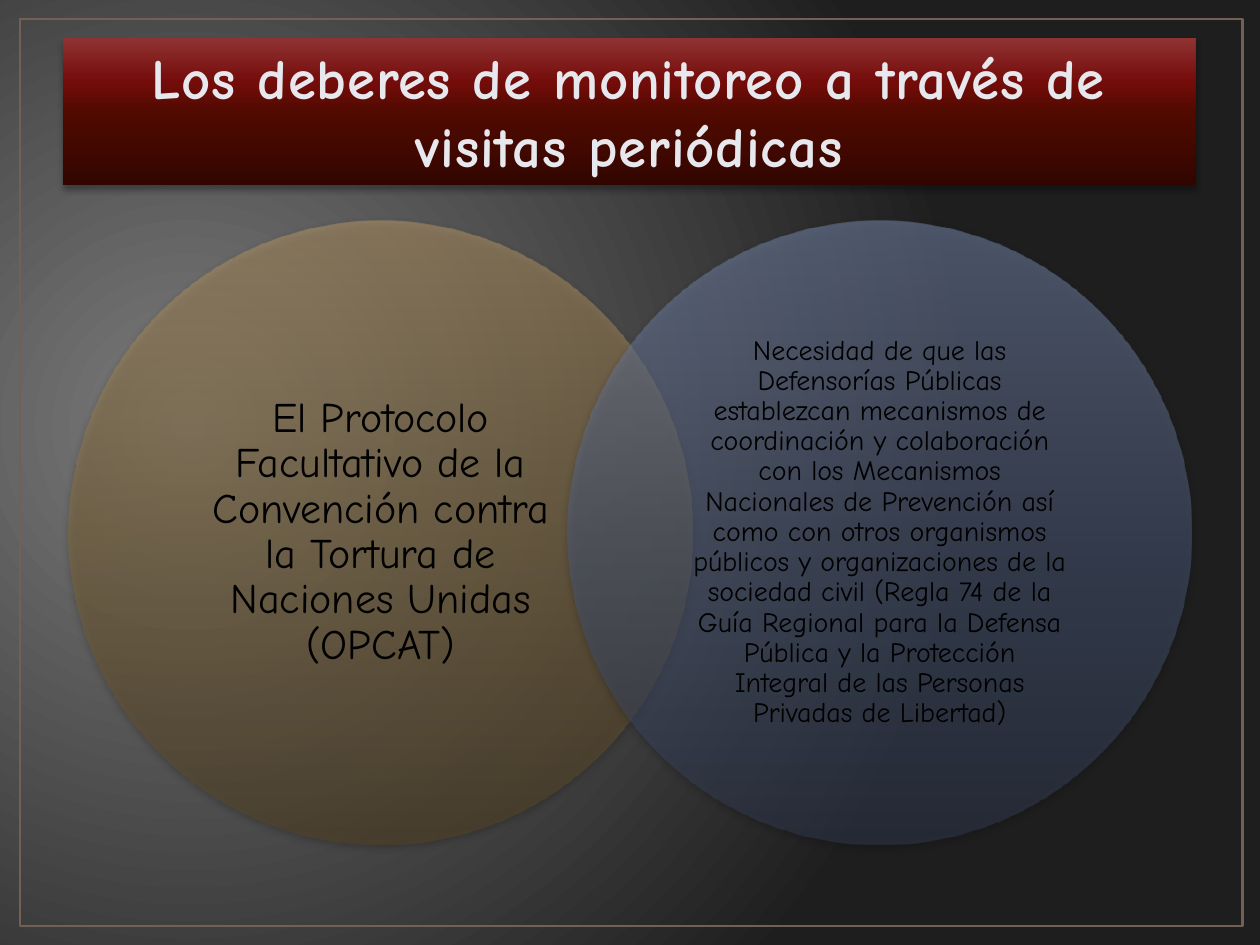
from pptx import Presentation
from pptx.dml.color import RGBColor
from pptx.enum.shapes import MSO_SHAPE
from pptx.enum.text import MSO_ANCHOR, MSO_AUTO_SIZE, PP_ALIGN
from pptx.oxml import parse_xml
from pptx.oxml.ns import nsdecls
from pptx.util import Pt

FONT = "Comic Neue"
BLACK = RGBColor(0x00, 0x00, 0x00)
PALE = RGBColor(0xE6, 0xE8, 0xEE)
EDGE = RGBColor(0x72, 0x60, 0x56)
WINE = RGBColor(0x56, 0x00, 0x00)
GREYS = [(0, RGBColor(0x7A, 0x7A, 0x7A)), (100, RGBColor(0x1E, 0x1E, 0x1E))]
REDS = [(0, RGBColor(0x32, 0x06, 0x00)), (50, RGBColor(0x51, 0x0A, 0x00)),
        (70, RGBColor(0x74, 0x0C, 0x0A)), (100, RGBColor(0x8F, 0x33, 0x32))]
GOLDS = [(0, RGBColor(0x56, 0x44, 0x25)), (50, RGBColor(0x89, 0x6D, 0x3E)),
         (70, RGBColor(0x9D, 0x80, 0x50)), (100, RGBColor(0xC0, 0x9F, 0x6B))]
BLUES = [(0, RGBColor(0x31, 0x3B, 0x51)), (50, RGBColor(0x50, 0x60, 0x82)),
         (70, RGBColor(0x63, 0x73, 0x96)), (100, RGBColor(0x7F, 0x91, 0xB8))]
UPWARD = '<a:lin ang="16200000" scaled="0"/>'
GLOW = ('<a:path path="circle"><a:fillToRect l="15000" t="50000" '
        'r="85000" b="60000"/></a:path>')


def shade(solid, stops, course, alpha=100):
    """Swap a solid fill element for a gradient."""
    marks = "".join(
        f'<a:gs pos="{pos * 1000}"><a:srgbClr val="{color}">'
        f'<a:alpha val="{alpha * 1000}"/></a:srgbClr></a:gs>'
        for pos, color in stops)
    solid.getparent().replace(solid, parse_xml(
        f'<a:gradFill {nsdecls("a")} rotWithShape="1">'
        f'<a:gsLst>{marks}</a:gsLst>{course}</a:gradFill>'))


def dress(shape, stops, alpha, blur, drop, dark):
    """Give a shape a gradient, no outline and a shadow below it."""
    shape.fill.solid()
    shade(shape.element.xpath("./p:spPr/a:solidFill")[0], stops, UPWARD, alpha)
    shape.line.fill.background()
    shape.shadow.inherit = False
    shape.element.xpath("./p:spPr/a:effectLst")[0].append(parse_xml(
        f'<a:outerShdw {nsdecls("a")} blurRad="{Pt(blur)}" dist="{Pt(drop)}" '
        f'dir="5400000" rotWithShape="0"><a:srgbClr val="{BLACK}">'
        f'<a:alpha val="{dark * 1000}"/></a:srgbClr></a:outerShdw>'))


deck = Presentation()
deck.slide_width, deck.slide_height = Pt(720), Pt(540)
slide = deck.slides.add_slide(deck.slide_layouts[5])

# Background
slide.background.fill.solid()
shade(slide.element.xpath(".//p:bgPr/a:solidFill")[0], GREYS, GLOW)

# Title
title = slide.shapes.title
title.left, title.top, title.width, title.height = Pt(36), Pt(21.6), Pt(647.3), Pt(84.2)
dress(title, REDS, 100, 3.5, 2.2, 32)
frame = title.text_frame
frame.text = "Los deberes de monitoreo a través de visitas periódicas"
frame.word_wrap = True
frame.auto_size = MSO_AUTO_SIZE.NONE
frame.vertical_anchor = MSO_ANCHOR.BOTTOM
para = frame.paragraphs[0]
para.alignment = PP_ALIGN.CENTER
run = para.runs[0]
run.font.name, run.font.size, run.font.bold = FONT, Pt(32.4), True
run.font.color.rgb = PALE
props = run.font.fill and run.element.rPr if hasattr(run, "element") else para.runs[0].font
marks = title.element.xpath(".//a:r/a:rPr")[0]
marks.set("spc", "50")
marks.insert(0, parse_xml(
    f'<a:ln {nsdecls("a")} w="{Pt(1.05)}"><a:solidFill>'
    f'<a:srgbClr val="{WINE}"/></a:solidFill></a:ln>'))

# Border, behind the title
border = slide.shapes.add_shape(
    MSO_SHAPE.RECTANGLE, Pt(11.5), Pt(10.8), Pt(698.4), Pt(518.4))
border.fill.background()
border.line.color.rgb, border.line.width = EDGE, Pt(1.5)
border.shadow.inherit = False
title.element.addprevious(border.element)

# Overlapping circles with their texts
DISC, BOX = 356.4, 252
venn = slide.shapes.add_group_shape()
sides = [
    (39.4, GOLDS, 24, 2.2,
     "El Protocolo Facultativo de la Convención contra la Tortura de "
     "Naciones Unidas (OPCAT)"),
    (324.5, BLUES, 16, 1.4,
     "Necesidad de que las Defensorías Públicas establezcan mecanismos de "
     "coordinación y colaboración con los Mecanismos Nacionales de Prevención "
     "así como con otros organismos públicos y organizaciones de la sociedad "
     "civil (Regla 74 de la Guía Regional para la Defensa Pública y la "
     "Protección Integral de las Personas Privadas de Libertad)"),
]
for left, stops, size, pad, words in sides:
    disc = venn.shapes.add_shape(
        MSO_SHAPE.OVAL, Pt(left), Pt(126), Pt(DISC), Pt(DISC))
    dress(disc, stops, 50, 5, 2, 43)
    inset = (DISC - BOX) / 2
    label = venn.shapes.add_textbox(
        Pt(left + inset), Pt(126 + inset), Pt(BOX), Pt(BOX))
    frame = label.text_frame
    frame.text = words
    frame.word_wrap = True
    frame.vertical_anchor = MSO_ANCHOR.MIDDLE
    frame.margin_left = frame.margin_right = Pt(19.4)
    frame.margin_top = frame.margin_bottom = Pt(pad)
    para = frame.paragraphs[0]
    para.alignment, para.line_spacing = PP_ALIGN.CENTER, 0.9
    font = para.runs[0].font
    font.name, font.size, font.color.rgb = FONT, Pt(size), BLACK

deck.save("out.pptx")
